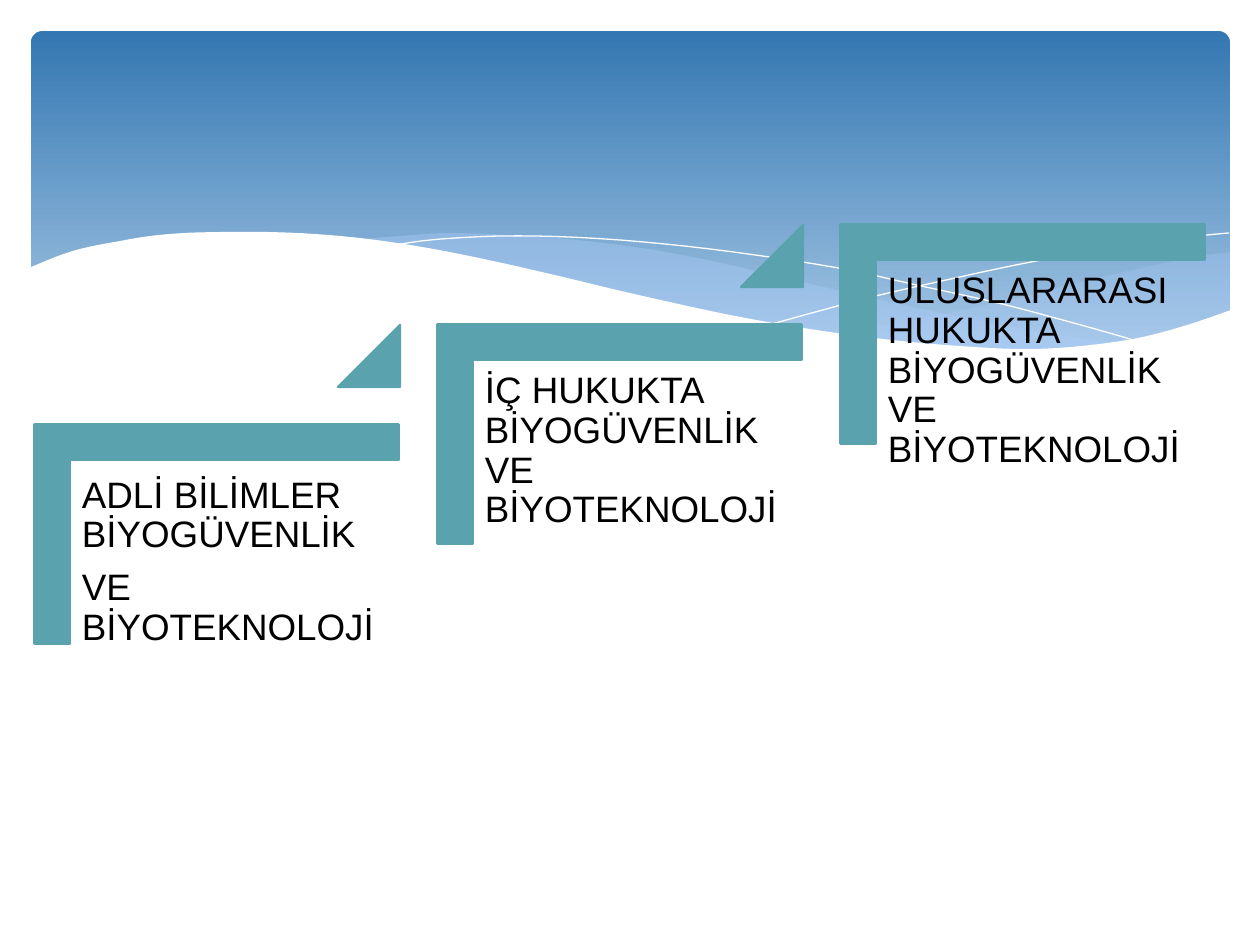
import pptx
import pptx.util
import pptx.dml.color
import pptx.enum.shapes
import pptx.enum.text
import pptx.oxml
import pptx.oxml.ns

SCALE = 914400 / 126
COLORS = {"sky_top": "3477B2", "sky_bottom": "A1C4E3", "wave": "ACCBF9",
          "white": "FFFFFF", "step": "5AA2AE", "text": "000000"}
RGB = {name: pptx.dml.color.RGBColor.from_string(code) for name, code in COLORS.items()}
KINDS = pptx.enum.shapes.MSO_SHAPE


def px(*lengths):
    return [pptx.util.Emu(round(length * SCALE)) for length in lengths]


def add_curve(knots, corners=(), closed=True):
    padded = [knots[0], *knots, knots[-1]]
    points = []
    for a, b, c, d in zip(padded, padded[1:], padded[2:], padded[3:]):
        for t in (0.25, 0.5, 0.75, 1):
            points.append(px(*(
                (2 * q + (r - p) * t + (2 * p - 5 * q + 4 * r - s) * t ** 2
                 + (3 * q - p - 3 * r + s) * t ** 3) / 2
                for p, q, r, s in zip(a, b, c, d))))
    points += [px(*corner) for corner in corners]
    builder = page.shapes.build_freeform(*px(*knots[0]), scale=1.0)
    builder.add_line_segments(points, close=closed)
    curve = builder.convert_to_shape()
    curve.shadow.inherit = False
    return curve


deck = pptx.Presentation()
deck.slide_width, deck.slide_height = px(1260, 945)
page = deck.slides.add_slide(deck.slide_layouts[6])

sky = page.shapes.add_shape(KINDS.ROUNDED_RECTANGLE, *px(31, 31, 1199, 340))
sky.adjustments[0] = 0.034
sky.shadow.inherit = False
sky.line.fill.background()
sky.fill.gradient()
sky.fill.gradient_angle = 270
for stop, name, position in zip(sky.fill.gradient_stops, ("sky_top", "sky_bottom"), (0, 0.9)):
    stop.color.rgb = RGB[name]
    stop.position = position

right_wave = [(1230, 252), (1194, 257), (1142, 268), (1085, 281), (1014, 299), (919, 319),
              (833, 334), (888, 341), (939, 346), (1012, 350), (1076, 348), (1130, 340),
              (1178, 330), (1230, 311)]
middle_wave = [(1125, 344), (1055, 334), (976, 320), (890, 302), (793, 280), (717, 262),
               (648, 249), (586, 241), (529, 236), (455, 233), (413, 235), (360, 241),
               (431, 251), (509, 266), (566, 279), (668, 302), (757, 321), (838, 335),
               (910, 345), (974, 349), (1031, 350), (1080, 349), (1125, 344)]
for knots, opacity in ((right_wave, 29), (middle_wave, 40)):
    wave = add_curve(knots)
    wave.line.fill.background()
    wave.fill.solid()
    wave.fill.fore_color.rgb = RGB["wave"]
    tint = wave._element.spPr.find(".//" + pptx.oxml.ns.qn("a:srgbClr"))
    tint.append(pptx.oxml.parse_xml(
        f'<a:alpha {pptx.oxml.ns.nsdecls("a")} val="{opacity * 1000}"/>'))

falling_line = [(389, 246), (422, 241), (457, 238), (505, 236), (567, 237), (643, 242),
                (733, 252), (838, 268), (916, 285), (1002, 304), (1095, 329), (1143, 343)]
rising_line = [(772, 324), (823, 310), (876, 296), (942, 281), (1016, 265), (1091, 251),
               (1146, 242), (1198, 236), (1229, 233)]
for knots in (falling_line, rising_line):
    thread = add_curve(knots, closed=False)
    thread.fill.background()
    thread.line.color.rgb = RGB["white"]
    thread.line.width = 0

edge = [(1231, 310), (1184, 326), (1133, 339), (1071, 347), (1019, 349), (959, 346),
        (892, 340), (816, 330), (730, 315), (634, 294), (563, 277), (493, 261),
        (428, 248), (368, 239), (315, 234), (266, 232), (223, 232), (184, 233),
        (150, 236), (120, 241), (84, 248), (58, 256), (29, 268)]
ground = add_curve(edge, corners=[(29, 415), (1231, 415)])
ground.fill.solid()
ground.fill.fore_color.rgb = RGB["white"]
ground.line.fill.background()

steps = [["ADLİ BİLİMLER", "BİYOGÜVENLİK", "VE BİYOTEKNOLOJİ"],
         ["İÇ HUKUKTA BİYOGÜVENLİK VE BİYOTEKNOLOJİ"],
         ["ULUSLARARASI HUKUKTA BİYOGÜVENLİK VE BİYOTEKNOLOJİ"]]
for index, lines in enumerate(steps):
    right, up = index * 403, index * 100
    marks = [page.shapes.add_shape(KINDS.CORNER, *px(107 + right, 352 - up, 219, 364))]
    marks[0].rotation = 90
    marks[0].adjustments[0] = marks[0].adjustments[1] = 0.161

    box = page.shapes.add_textbox(*px(71 + right, 461 - up, 329, 289))
    frame = box.text_frame
    frame.word_wrap = True
    frame.margin_left, frame.margin_top, frame.margin_right, frame.margin_bottom = px(11, 11, 11, 11)
    frame.vertical_anchor = pptx.enum.text.MSO_ANCHOR.TOP
    frame.text = "\n".join(lines)
    for para in frame.paragraphs:
        para.font.name = "Arial"
        para.font.size = pptx.util.Pt(21)
        para.font.color.rgb = RGB["text"]
        if para.text != "ADLİ BİLİMLER":
            para.line_spacing = 0.9
            para.space_after = pptx.util.Pt(7.35)

    if index < len(steps) - 1:
        triangle = page.shapes.add_shape(KINDS.ISOSCELES_TRIANGLE,
                                         *px(338 + right, 325 - up, 62, 62))
        triangle.adjustments[0] = 1
        marks.append(triangle)
    for mark in marks:
        mark.shadow.inherit = False
        mark.fill.solid()
        mark.fill.fore_color.rgb = RGB["step"]
        mark.line.color.rgb = RGB["step"]
        mark.line.width = pptx.util.Pt(1.25)

deck.save("out.pptx")
